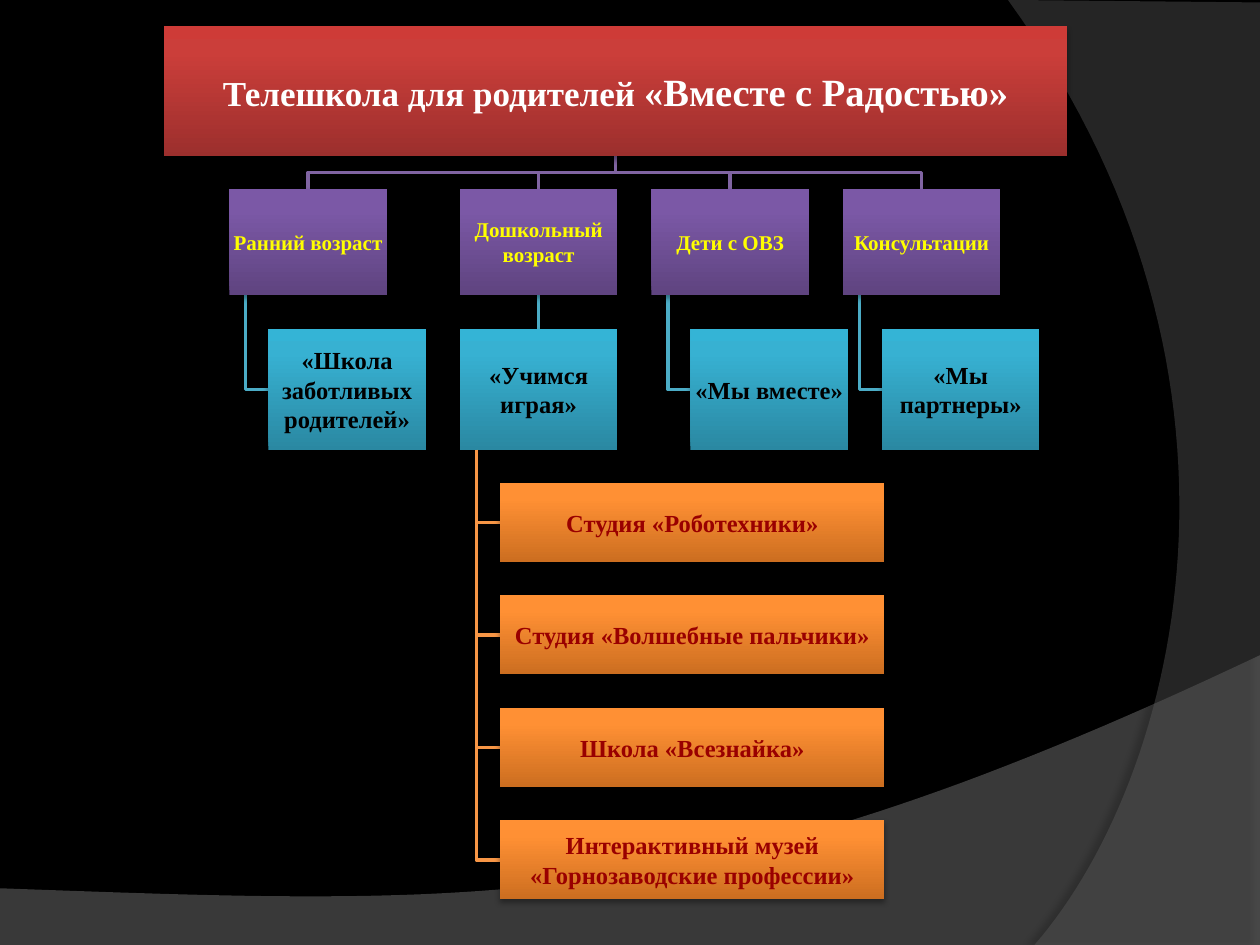
import pptx
import pptx.dml.color
import pptx.enum.shapes
import pptx.enum.text
import pptx.oxml.ns
import pptx.util
from lxml import etree
from pptx.util import Inches

FONT = "Times New Roman"
ROOT = [("Телешкола для родителей ", 20), ("«Вместе с Радостью»", 22)]
BRANCHES = [
    ("Ранний возраст", "«Школа заботливых родителей»", 1.82, 0.31),
    ("Дошкольный возраст", "«Учимся играя»", 3.65, 0),
    ("Дети с ОВЗ", "«Мы вместе»", 5.17, 0.31),
    ("Консультации", "«Мы партнеры»", 6.69, 0.31),
]
STUDIOS = [
    "Студия «Роботехники»",
    "Студия «Волшебные пальчики»",
    "Школа «Всезнайка»",
    "Интерактивный музей\n«Горнозаводские профессии»",
]
LEVELS = {
    "root": dict(stops=("9C2F2D", "CB3E3A", "CE3B37"), text="FFFFFF"),
    "age": dict(stops=("5F4480", "7B58A6", "7C57A8"), text="FFFF00", link="8064A2"),
    "programme": dict(stops=("2A88A2", "37B1D2", "34B4D6"), text="000000", link="4BACC6"),
    "studio": dict(stops=("CC6E20", "FF9034", "FF9136"), text="990000", link="F79646"),
}
STOP_POSITIONS = (0, 80, 100)
ROOT_BOX = (1.3, 0.21, 7.17, 1.03)
CARD_WIDTH = 1.25
AGE_TOP, AGE_HEIGHT = 1.5, 0.84
PROGRAMME_TOP, PROGRAMME_HEIGHT = 2.61, 0.96
STUDIO_LEFT, STUDIO_TOP, STUDIO_WIDTH, STUDIO_HEIGHT = 3.97, 3.83, 3.05, 0.63
STUDIO_PITCH = 0.893
TRUNK_INSET = 0.13

HILL = dict(before=[(0, 7.05), (0, 7.51), (10, 7.51), (10, 5.2)],
            curve=[(10, 5.2), (5.59, 7.29), (3.91, 7.19), (0, 7.05)], after=[],
            color="7F7F7F", alpha=45, shadow=(35, 4, 3.5, 270))
ARC = dict(before=[(10, 0.02), (10, 7.5), (8.21, 7.5)],
           curve=[(8.21, 7.5), (9.35, 6.19), (10.18, 3), (8, 0)], after=[(10, 0.02)],
           color="5E5E5E", alpha=40, shadow=(45, 4, 4, 180))

qn = pptx.oxml.ns.qn


def rgb(value):
    return pptx.dml.color.RGBColor.from_string(value)


def add_color(parent, color, alpha=100):
    element = etree.SubElement(parent, qn("a:srgbClr"), val=color)
    if alpha < 100:
        etree.SubElement(element, qn("a:alpha"), val=str(alpha * 1000))


def set_shadow(shape, alpha, blur, distance, direction):
    shape.shadow.inherit = False
    effects = shape._element.spPr.find(qn("a:effectLst"))
    shadow = etree.SubElement(
        effects, qn("a:outerShdw"), blurRad=str(int(pptx.util.Pt(blur))),
        dist=str(int(pptx.util.Pt(distance))), dir=str(direction * 60000), rotWithShape="0")
    add_color(shadow, "000000", alpha)


def add_outline(slide, points, close):
    emu = [(Inches(x), Inches(y)) for x, y in points]
    builder = slide.shapes.build_freeform(*emu[0], scale=1.0)
    builder.add_line_segments(emu[1:], close=close)
    return builder.convert_to_shape()


def bezier(controls, steps=60):
    for step in range(1, steps + 1):
        t = step / steps
        weights = ((1 - t) ** 3, 3 * t * (1 - t) ** 2, 3 * t * t * (1 - t), t ** 3)
        yield tuple(sum(w * c[axis] for w, c in zip(weights, controls)) for axis in (0, 1))


def add_swoosh(slide, before, curve, after, color, alpha, shadow):
    swoosh = add_outline(slide, before + list(bezier(curve)) + after, True)
    swoosh.fill.solid()
    swoosh.fill.fore_color.rgb = rgb(color)
    tint = swoosh._element.spPr.find(qn("a:solidFill"))[0]
    etree.SubElement(tint, qn("a:alpha"), val=str(alpha * 1000))
    swoosh.line.fill.background()
    set_shadow(swoosh, *shadow)


def add_link(slide, level, points):
    if len(points) == 2:
        ends = [Inches(value) for point in points for value in point]
        link = slide.shapes.add_connector(pptx.enum.shapes.MSO_CONNECTOR.STRAIGHT, *ends)
        etree.SubElement(link._element.spPr, qn("a:effectLst"))
    else:
        link = add_outline(slide, points, False)
        link.fill.background()
        link.shadow.inherit = False
    link.line.color.rgb = rgb(LEVELS[level]["link"])
    link.line.width = pptx.util.Pt(2)


def add_box(slide, level, box, text, size=14):
    card = slide.shapes.add_shape(
        pptx.enum.shapes.MSO_SHAPE.RECTANGLE, *[Inches(value) for value in box])
    card.fill.gradient()
    card.fill.gradient_angle = 90
    stops = card._element.spPr.find(qn("a:gradFill")).find(qn("a:gsLst"))
    stops.clear()
    for position, color in zip(STOP_POSITIONS, LEVELS[level]["stops"]):
        add_color(etree.SubElement(stops, qn("a:gs"), pos=str(position * 1000)), color)
    card.line.fill.background()
    set_shadow(card, 35, 3.1, 1.8, 90)

    frame = card.text_frame
    frame.word_wrap = True
    frame.vertical_anchor = pptx.enum.text.MSO_ANCHOR.MIDDLE
    frame.margin_left = frame.margin_right = Inches(0.01)
    frame.margin_top = frame.margin_bottom = Inches(0.01)
    frame.text = text
    for paragraph in frame.paragraphs:
        paragraph.alignment = pptx.enum.text.PP_ALIGN.CENTER
        for run in paragraph.runs:
            format_run(run, level, size)
    return card


def format_run(run, level, size):
    run.font.name = FONT
    run.font.size = pptx.util.Pt(size)
    run.font.bold = True
    run.font.color.rgb = rgb(LEVELS[level]["text"])


def add_branches(slide):
    root_left, root_top, root_width, root_height = ROOT_BOX
    root_x, root_bottom = root_left + root_width / 2, root_top + root_height
    bus_y = (root_bottom + AGE_TOP) / 2
    age_bottom = AGE_TOP + AGE_HEIGHT
    for age, programme, left, indent in BRANCHES:
        middle, trunk = left + CARD_WIDTH / 2, left + TRUNK_INSET
        add_link(slide, "age", [(root_x, root_bottom), (root_x, bus_y),
                                (middle, bus_y), (middle, AGE_TOP)])
        if indent:
            programme_y = PROGRAMME_TOP + PROGRAMME_HEIGHT / 2
            add_link(slide, "programme", [(trunk, age_bottom), (trunk, programme_y),
                                          (left + indent, programme_y)])
        else:
            add_link(slide, "programme", [(middle, age_bottom), (middle, PROGRAMME_TOP)])
        add_box(slide, "age", (left, AGE_TOP, CARD_WIDTH, AGE_HEIGHT), age, 12)
        add_box(slide, "programme",
                (left + indent, PROGRAMME_TOP, CARD_WIDTH, PROGRAMME_HEIGHT), programme)


def add_studios(slide):
    trunk = BRANCHES[1][2] + TRUNK_INSET
    trunk_top = PROGRAMME_TOP + PROGRAMME_HEIGHT
    for index, studio in enumerate(STUDIOS):
        top = STUDIO_TOP + index * STUDIO_PITCH
        middle = top + STUDIO_HEIGHT / 2
        add_link(slide, "studio", [(trunk, trunk_top), (trunk, middle), (STUDIO_LEFT, middle)])
        add_box(slide, "studio", (STUDIO_LEFT, top, STUDIO_WIDTH, STUDIO_HEIGHT), studio)


def main():
    deck = pptx.Presentation()
    deck.slide_width, deck.slide_height = Inches(10), Inches(7.5)
    slide = deck.slides.add_slide(deck.slide_layouts[6])
    slide.background.fill.solid()
    slide.background.fill.fore_color.rgb = rgb("000000")
    for swoosh in (HILL, ARC):
        add_swoosh(slide, **swoosh)
    add_branches(slide)
    add_studios(slide)
    root = add_box(slide, "root", ROOT_BOX, "")
    for words, size in ROOT:
        run = root.text_frame.paragraphs[0].add_run()
        run.text = words
        format_run(run, "root", size)
    deck.save("out.pptx")


if __name__ == "__main__":
    main()
